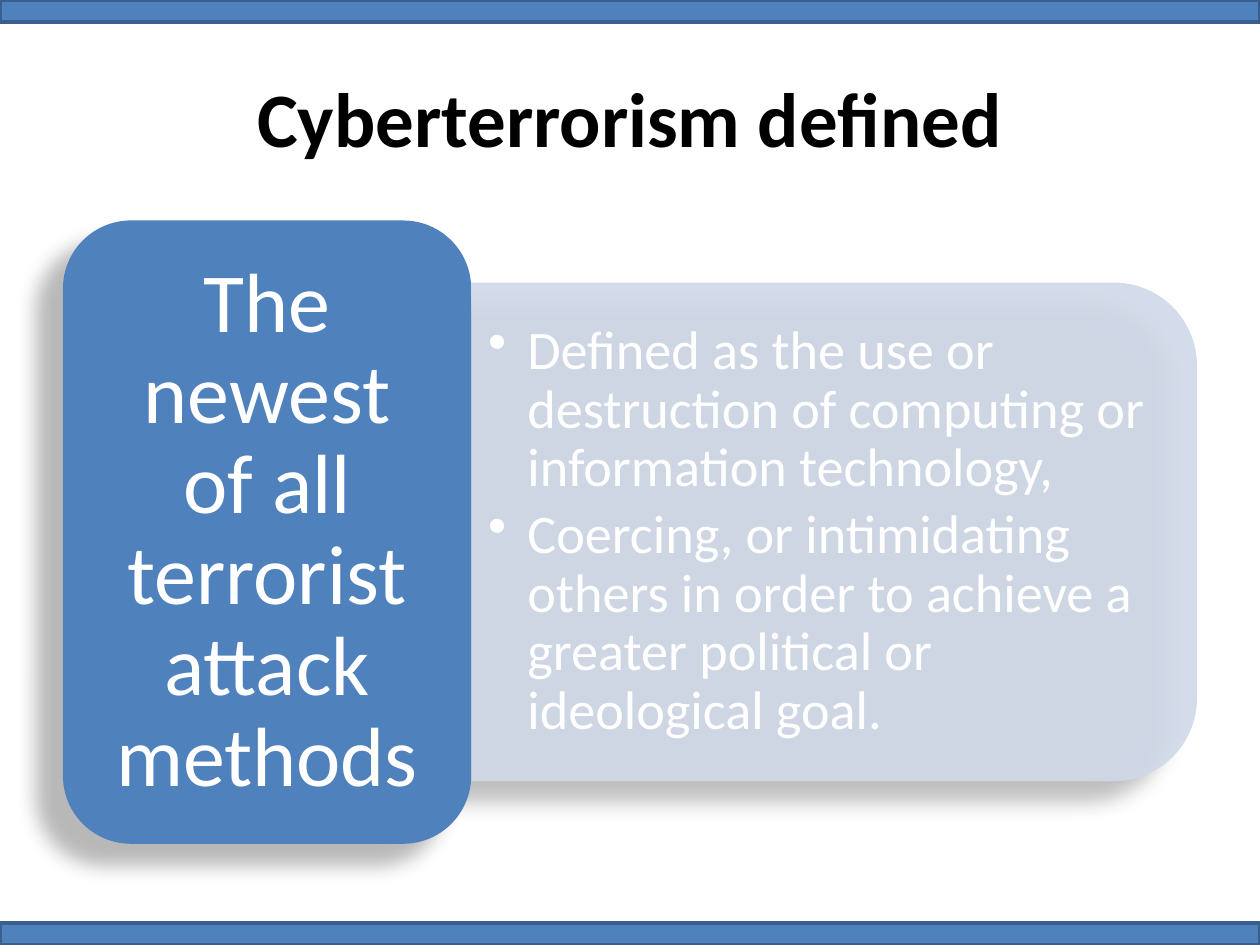
import pptx
import pptx.util
import pptx.dml.color
import pptx.enum.shapes
import pptx.enum.text
import pptx.oxml
import pptx.oxml.ns
from lxml import etree

Pt = pptx.util.Pt
Shapes = pptx.enum.shapes.MSO_SHAPE
Align = pptx.enum.text.PP_ALIGN

WIDTH, HEIGHT = 720, 540
BAR_HEIGHT = 12.5
FONT = "Calibri"
COLORS = {
    "bar": "4F81BD",
    "bar_line": "3A5F8C",
    "panel": "D0D8E8",
    "title": "000000",
    "light": "FFFFFF",
    "shadow": "000000",
}


def rgb(name):
    return pptx.dml.color.RGBColor.from_string(COLORS[name])


def add_child(parent, tag, **attributes):
    child = etree.SubElement(parent, pptx.oxml.ns.qn(tag))
    for name, value in attributes.items():
        child.set(name, str(value))
    return child


def add_block(slide, kind, box, color, line=None):
    shape = slide.shapes.add_shape(kind, *map(Pt, box))
    shape.shadow.inherit = False
    shape.fill.solid()
    shape.fill.fore_color.rgb = rgb(color)
    if line:
        shape.line.color.rgb = rgb(line)
        shape.line.width = Pt(2)
    else:
        shape.line.fill.background()
    return shape


def add_soft_shadow(shape):
    """Cast a blurred shadow down and to the left."""
    effects = shape._element.spPr.find(pptx.oxml.ns.qn("a:effectLst"))
    shadow = add_child(effects, "a:outerShdw", blurRad=Pt(11.8), dist=Pt(19.7),
                       dir=141 * 60000, algn="ctr", rotWithShape=0)
    color = add_child(shadow, "a:srgbClr", val=COLORS["shadow"])
    add_child(color, "a:alpha", val=28000)


def add_text(slide, box, texts, size, color, margins, align=Align.LEFT,
             bold=False, spacing=None, after=None, indent=None):
    """Add a middle-anchored text box; after is a percentage, indent adds bullets."""
    frame = slide.shapes.add_textbox(*map(Pt, box)).text_frame
    frame.word_wrap = True
    frame.vertical_anchor = pptx.enum.text.MSO_ANCHOR.MIDDLE
    frame.margin_left = frame.margin_right = Pt(margins[0])
    frame.margin_top = frame.margin_bottom = Pt(margins[1])
    for index, text in enumerate(texts):
        paragraph = frame.add_paragraph() if index else frame.paragraphs[0]
        paragraph.text = text
        paragraph.alignment = align
        paragraph.line_spacing = spacing
        properties = paragraph._p.get_or_add_pPr()
        if after:
            add_child(add_child(properties, "a:spcAft"), "a:spcPct", val=after * 1000)
        if indent:
            properties.set("marL", str(Pt(indent)))
            properties.set("indent", str(-Pt(indent)))
            add_child(properties, "a:buChar", char="•")
        paragraph.font.name = FONT
        paragraph.font.size = Pt(size)
        paragraph.font.bold = bold
        paragraph.font.color.rgb = rgb(color)


def add_bars(slide):
    for top in (0, HEIGHT - BAR_HEIGHT):
        add_block(slide, Shapes.RECTANGLE, (0, top, WIDTH, BAR_HEIGHT), "bar", "bar_line")


def add_detail_panel(slide, box, texts):
    """Place a panel whose right-hand corners are rounded."""
    left, top, width, height = box
    # The preset rounds its top corners, so it is turned a quarter about its centre.
    turned = (left + (width - height) / 2, top + (height - width) / 2, height, width)
    panel = add_block(slide, Shapes.ROUND_2_SAME_RECTANGLE, turned, "panel")
    panel.rotation = 90
    color = panel._element.spPr.find(".//" + pptx.oxml.ns.qn("a:srgbClr"))
    add_child(color, "a:alpha", val=90000)
    add_soft_shadow(panel)
    inset = 14
    add_text(slide, (left, top + inset, width - inset, height - 2 * inset), texts,
             31, "light", (9.6, 4.8), spacing=0.9, after=15, indent=22.5)


def add_heading_card(slide, box, text):
    left, top, width, height = box
    add_soft_shadow(add_block(slide, Shapes.ROUNDED_RECTANGLE, box, "bar"))
    inset = 11.4
    add_text(slide, (left + inset, top + inset, width - 2 * inset, height - 2 * inset),
             [text], 48, "light", (14.4, 7.2), Align.CENTER, spacing=0.9, after=35)


def main():
    presentation = pptx.Presentation()
    presentation.slide_width, presentation.slide_height = Pt(WIDTH), Pt(HEIGHT)
    slide = presentation.slides.add_slide(presentation.slide_layouts[6])
    add_bars(slide)
    add_text(slide, (36, 21.6, 648, 90), ["Cyberterrorism defined"], 44, "title",
             (7.2, 3.6), Align.CENTER, bold=True)
    add_detail_panel(slide, (269.3, 161.5, 414.7, 285), [
        "Defined as the use or destruction of computing or information technology,",
        "Coercing, or intimidating others in order to achieve a greater political "
        "or ideological goal.",
    ])
    add_heading_card(slide, (36, 126, 233.3, 356.2),
                     "The newest of all terrorist attack methods")
    presentation.save("out.pptx")


if __name__ == "__main__":
    main()
